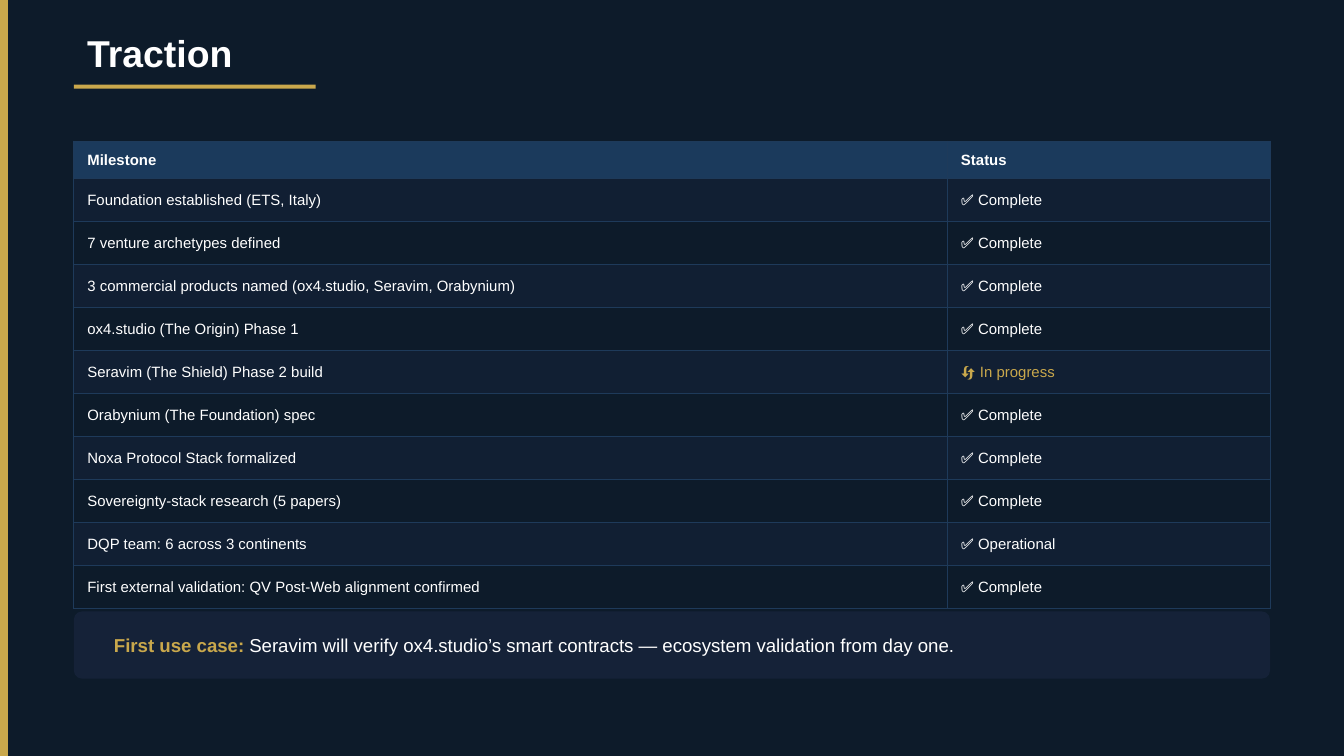
from lxml.etree import SubElement
from pptx import Presentation
from pptx.dml.color import RGBColor
from pptx.enum.shapes import MSO_SHAPE
from pptx.enum.text import MSO_ANCHOR
from pptx.oxml.ns import qn
from pptx.util import Inches, Pt

NAVY = RGBColor(0x0D, 0x1B, 0x2A)
NAVY_BAND = RGBColor(0x11, 0x1F, 0x33)
HEADER_BLUE = RGBColor(0x1B, 0x3A, 0x5C)
GRID_BLUE = RGBColor(0x1E, 0x3A, 0x5A)
PANEL = RGBColor(0x15, 0x22, 0x38)
GOLD = RGBColor(0xC9, 0xA8, 0x4C)
WHITE = RGBColor(0xFF, 0xFF, 0xFF)

DONE = "✅ Complete"
MILESTONES = [
    ("Milestone", "Status"),
    ("Foundation established (ETS, Italy)", DONE),
    ("7 venture archetypes defined", DONE),
    ("3 commercial products named (ox4.studio, Seravim, Orabynium)", DONE),
    ("ox4.studio (The Origin) Phase 1", DONE),
    ("Seravim (The Shield) Phase 2 build", "🔄 In progress"),
    ("Orabynium (The Foundation) spec", DONE),
    ("Noxa Protocol Stack formalized", DONE),
    ("Sovereignty-stack research (5 papers)", DONE),
    ("DQP team: 6 across 3 continents", "✅ Operational"),
    ("First external validation: QV Post-Web alignment confirmed", DONE),
]

# Widescreen page, 16:9
prs = Presentation()
prs.slide_width = Inches(10)
prs.slide_height = Inches(10 * 9 / 16)
slide = prs.slides.add_slide(prs.slide_layouts[6])
slide.background.fill.solid()
slide.background.fill.fore_color.rgb = NAVY


def add_panel(kind, left, top, width, height, color):
    panel = slide.shapes.add_shape(
        kind, Inches(left), Inches(top), Inches(width), Inches(height))
    panel.shadow.inherit = False
    panel.fill.solid()
    panel.fill.fore_color.rgb = color
    panel.line.fill.background()
    return panel


def add_run(paragraph, text, **format_values):
    run = paragraph.add_run()
    run.text = text
    run.font.color.rgb = format_values.pop("color")
    for name, value in {"name": "Arial", **format_values}.items():
        setattr(run.font, name, value)


# Gold side bar, title and underline
add_panel(MSO_SHAPE.RECTANGLE, 0, 0, 0.06, 5.63, GOLD)
title = slide.shapes.add_textbox(
    Inches(0.55), Inches(0.18), Inches(8.9), Inches(0.42)).text_frame
add_panel(MSO_SHAPE.RECTANGLE, 0.55, 0.63, 1.8, 0.03, GOLD)

# Milestone table
milestones = slide.shapes.add_table(
    len(MILESTONES), 2, Inches(0.55), Inches(1.05), Inches(8.9), Inches(1)).table
for column, width in zip(milestones.columns, (6.5, 2.4)):
    column.width = Inches(width)

for i, entry in enumerate(MILESTONES):
    header = i == 0
    milestones.rows[i].height = Inches(0.28 if header else 0.32)
    background = HEADER_BLUE if header else NAVY_BAND if i % 2 else NAVY
    for j, text in enumerate(entry):
        cell = milestones.cell(i, j)
        cell.vertical_anchor = MSO_ANCHOR.MIDDLE
        add_run(cell.text_frame.paragraphs[0], text, size=Pt(8), bold=header,
                color=GOLD if "In progress" in text else WHITE)
        # Borders come before the fill in the cell properties
        properties = cell._tc.get_or_add_tcPr()
        for side in ("a:lnL", "a:lnR", "a:lnT", "a:lnB"):
            border = SubElement(properties, qn(side), w=str(Pt(0.5)))
            line_fill = SubElement(border, qn("a:solidFill"))
            SubElement(line_fill, qn("a:srgbClr"), val=str(GRID_BLUE))
        cell.fill.solid()
        cell.fill.fore_color.rgb = background

# First use case callout
callout = add_panel(MSO_SHAPE.ROUNDED_RECTANGLE, 0.55, 4.55, 8.9, 0.5, PANEL)
callout.adjustments[0] = 0.12
use_case = slide.shapes.add_textbox(
    Inches(0.75), Inches(4.55), Inches(8.5), Inches(0.5)).text_frame

# Wording of the title and the callout
for frame in (title, use_case):
    frame.word_wrap = True
    frame.vertical_anchor = MSO_ANCHOR.MIDDLE
add_run(title.paragraphs[0], "Traction", size=Pt(20), bold=True, color=WHITE)
add_run(use_case.paragraphs[0], "First use case: ",
        size=Pt(10), bold=True, color=GOLD)
add_run(use_case.paragraphs[0],
        "Seravim will verify ox4.studio’s smart contracts — "
        "ecosystem validation from day one.",
        size=Pt(10), bold=False, color=WHITE)

prs.save("out.pptx")
